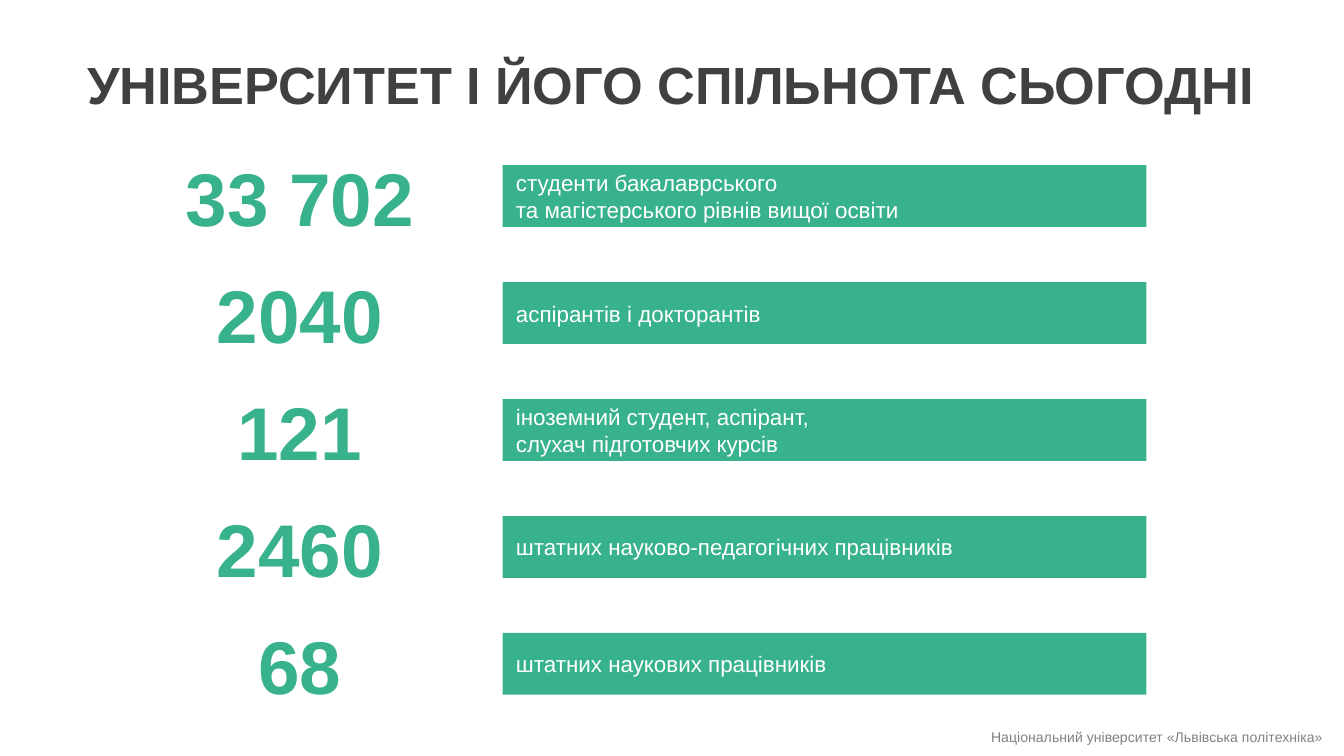
from typing import NamedTuple

from pptx import Presentation
from pptx.dml.color import RGBColor
from pptx.enum.shapes import MSO_SHAPE
from pptx.enum.text import MSO_ANCHOR as Anchor, MSO_AUTO_SIZE as AutoSize, PP_ALIGN as Align
from pptx.slide import Slide
from pptx.text.text import TextFrame
from pptx.util import Inches, Pt

COLORS = {"green": "38B28C", "title": "404040", "footer": "808080", "white": "FFFFFF"}
FIRST_TOP, ROW_STEP = 1.23, 0.87
NUMBER_RISE = 0.12  # number box starts this far above its bar
TIGHT = {
    "margin_left": Inches(0.04), "margin_right": Inches(0.04),
    "margin_top": Inches(0.02), "margin_bottom": Inches(0.02),
    "auto_size": AutoSize.SHAPE_TO_FIT_TEXT,
}


class Statistic(NamedTuple):
    number: str
    label: str


# In labels, \n starts a paragraph and \v breaks the line
STATISTICS = [
    Statistic("33 702", "студенти бакалаврського\nта магістерського рівнів вищої освіти"),
    Statistic("2040", "аспірантів і докторантів"),
    Statistic("121", "іноземний студент, аспірант, \vслухач підготовчих курсів"),
    Statistic("2460", "штатних науково-педагогічних працівників"),
    Statistic("68", "штатних наукових працівників"),
]


def write(frame: TextFrame, text: str, size: int, color: str, align: Align,
          bold: bool = False, **frame_format) -> None:
    """Fill a text frame with uniformly formatted paragraphs."""
    frame.text = text
    for name, value in {"word_wrap": True, **frame_format}.items():
        setattr(frame, name, value)
    font_format = {"name": "Arial", "size": Pt(size), "bold": bold}
    for para in frame.paragraphs:
        para.alignment = align
        for span in para.runs:
            for name, value in font_format.items():
                setattr(span.font, name, value)
            span.font.color.rgb = RGBColor.from_string(COLORS[color])


def draw_statistic(page: Slide, item: Statistic, top: float) -> None:
    """Draw one number with its labelled bar."""
    bar = page.shapes.add_shape(
        MSO_SHAPE.RECTANGLE, Inches(3.74), Inches(top), Inches(4.79), Inches(0.46))
    bar.shadow.inherit = False
    bar.fill.solid()
    bar.fill.fore_color.rgb = RGBColor.from_string(COLORS["green"])
    bar.line.fill.background()
    write(bar.text_frame, item.label, 12, "white", Align.LEFT,
          vertical_anchor=Anchor.MIDDLE)

    box = page.shapes.add_textbox(
        Inches(1.01), Inches(top - NUMBER_RISE), Inches(2.44), Inches(0.71))
    write(box.text_frame, item.number, 40, "green", Align.CENTER, bold=True,
          vertical_anchor=Anchor.MIDDLE, **TIGHT)


def main() -> None:
    # Widescreen page, 16:9
    deck = Presentation()
    deck.slide_width = Inches(10)
    deck.slide_height = deck.slide_width * 9 // 16
    page = deck.slides.add_slide(deck.slide_layouts[5])

    # Title
    title = page.shapes.title
    title.left, title.top = Inches(0.61), Inches(0.37)
    title.width, title.height = Inches(8.85), Inches(0.51)
    write(title.text_frame, "УНІВЕРСИТЕТ І ЙОГО СПІЛЬНОТА СЬОГОДНІ", 28, "title",
          Align.LEFT, bold=True, vertical_anchor=Anchor.TOP,
          **{**TIGHT, "word_wrap": False})

    # Statistics
    for row, item in enumerate(STATISTICS):
        draw_statistic(page, item, FIRST_TOP + row * ROW_STEP)

    # Footer, set as superscript
    footer = page.shapes.add_textbox(Inches(6.49), Inches(5.38), Inches(3.39), Inches(0.19))
    write(footer.text_frame, "Національний університет «Львівська політехніка»", 13,
          "footer", Align.RIGHT, **TIGHT)
    span = footer.text_frame.paragraphs[0].runs[0]
    span._r.get_or_add_rPr().set("baseline", "30000")

    deck.save("out.pptx")


if __name__ == "__main__":
    main()
